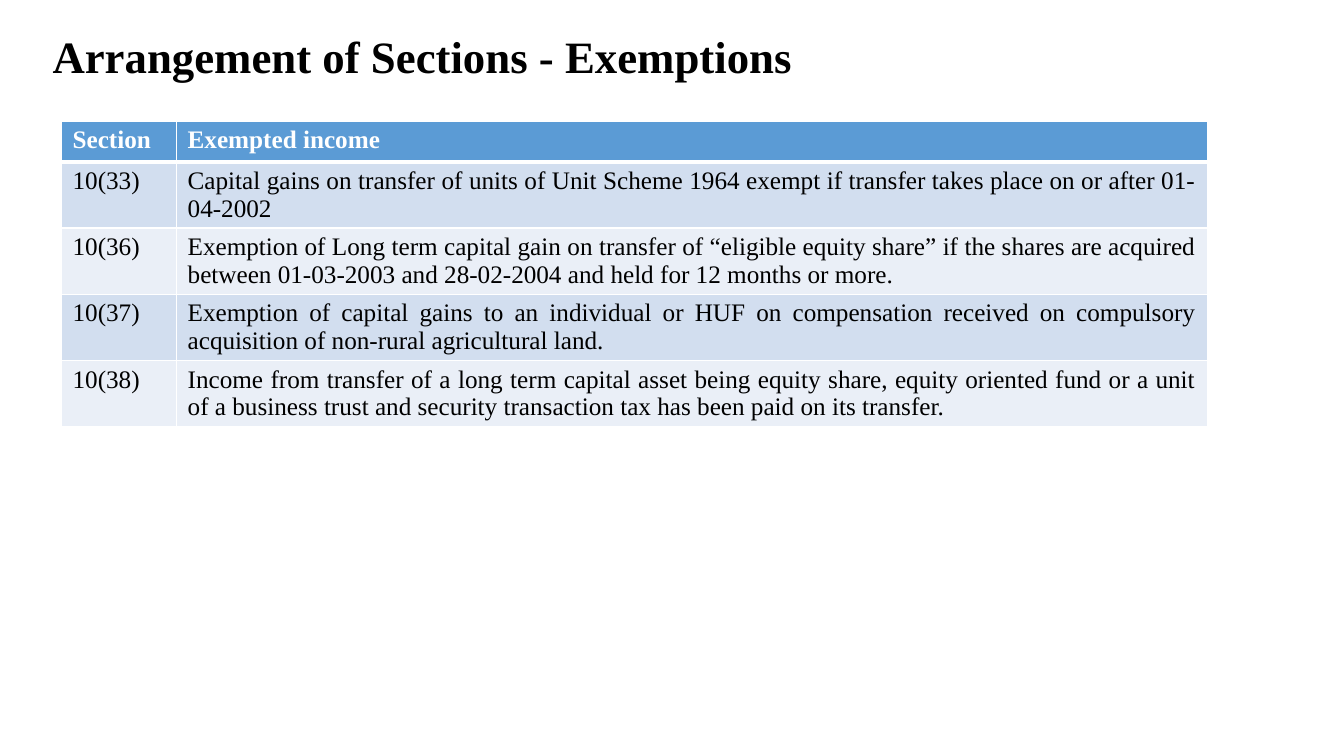
from dataclasses import dataclass

from lxml.etree import SubElement
from pptx import Presentation
from pptx.dml.color import RGBColor
from pptx.enum.text import MSO_ANCHOR, MSO_AUTO_SIZE, PP_ALIGN
from pptx.oxml.ns import qn
from pptx.util import Cm, Pt


@dataclass(frozen=True)
class Theme:
    """Fonts, sizes and colours of the slide."""
    font: str = "Times New Roman"
    title_size: int = 32
    table_size: int = 18
    text: str = "000000"
    light: str = "FFFFFF"
    header: str = "5B9BD5"
    bands: tuple = ("D2DEEF", "EAEFF7")
    rule: int = 1
    header_rule: int = 3


THEME = Theme()
TITLE = "Arrangement of Sections - Exemptions"
COLUMN_WIDTHS = (2.9, 25.98)
HEADER_HEIGHT, ROW_HEIGHT = 1.03, 1.66
EXEMPTIONS = (
    ("Section", "Exempted income"),
    ("10(33)", "Capital gains on transfer of units of Unit Scheme 1964 exempt if "
               "transfer takes place on or after 01-04-2002"),
    ("10(36)", "Exemption of Long term capital gain on transfer of “eligible equity share” "
               "if the shares are acquired between 01-03-2003 and 28-02-2004 and held for "
               "12 months or more."),
    ("10(37)", "Exemption of capital gains to an individual or HUF on compensation received "
               "on compulsory acquisition of non-rural agricultural land."),
    ("10(38)", "Income from transfer of a long term capital asset being equity share, equity "
               "oriented fund or a unit of a business trust and security transaction tax has "
               "been paid on its transfer."),
)


def set_values(target, values):
    """Set each attribute of the target from a dict."""
    for name, value in values.items():
        setattr(target, name, value)


def format_font(paragraph, size, color, bold):
    """Apply the theme font to a paragraph."""
    set_values(paragraph.font, {"name": THEME.font, "size": Pt(size), "bold": bold})
    paragraph.font.color.rgb = RGBColor.from_string(color)


def add_title(slide, text):
    """Fill and place the title placeholder."""
    title = slide.shapes.title
    set_values(title, {"left": Cm(1.07), "top": Cm(0.28),
                       "width": Cm(22.81), "height": Cm(2.41)})
    frame = title.text_frame
    frame.text = text
    set_values(frame, {"vertical_anchor": MSO_ANCHOR.MIDDLE, "word_wrap": True,
                       "auto_size": MSO_AUTO_SIZE.NONE})
    paragraph = frame.paragraphs[0]
    set_values(paragraph, {"alignment": PP_ALIGN.LEFT, "line_spacing": 0.9})
    format_font(paragraph, THEME.title_size, THEME.text, True)


def add_borders(cell, widths):
    """Draw the cell borders with the given widths in points."""
    properties = cell._tc.get_or_add_tcPr()
    for side, width in widths.items():
        line = SubElement(properties, qn(f"a:ln{side}"), w=str(Pt(width)))
        fill = SubElement(line, qn("a:solidFill"))
        SubElement(fill, qn("a:srgbClr"), val=THEME.light)


def format_cell(cell, text, row, column):
    """Write one cell as header or banded body."""
    is_header = row == 0
    widths = dict.fromkeys("LRTB", THEME.rule)
    if is_header:
        widths["B"] = THEME.header_rule
    elif row == 1:
        widths["T"] = THEME.header_rule
    add_borders(cell, widths)
    cell.fill.solid()
    fill_color = THEME.header if is_header else THEME.bands[(row - 1) % 2]
    cell.fill.fore_color.rgb = RGBColor.from_string(fill_color)
    set_values(cell, {"margin_left": Cm(0.28), "margin_right": Cm(0.28),
                      "margin_top": Cm(0.13), "margin_bottom": Cm(0.13)})
    cell.text = text
    paragraph = cell.text_frame.paragraphs[0]
    justified = column == 1 and not is_header
    paragraph.alignment = PP_ALIGN.JUSTIFY if justified else PP_ALIGN.LEFT
    format_font(paragraph, THEME.table_size,
                THEME.light if is_header else THEME.text, is_header)


def add_table(slide, rows):
    """Add the table with a header row and banded body rows."""
    heights = [HEADER_HEIGHT] + [ROW_HEIGHT] * (len(rows) - 1)
    table = slide.shapes.add_table(len(rows), len(COLUMN_WIDTHS), Cm(1.55), Cm(3.05),
                                   Cm(sum(COLUMN_WIDTHS)), Cm(sum(heights))).table
    for column, width in zip(table.columns, COLUMN_WIDTHS):
        column.width = Cm(width)
    for row, height in zip(table.rows, heights):
        row.height = Cm(height)
    for row_index, texts in enumerate(rows):
        for column_index, text in enumerate(texts):
            format_cell(table.cell(row_index, column_index), text, row_index, column_index)


def main():
    """Build and save the slide."""
    presentation = Presentation()
    set_values(presentation, {"slide_width": Cm(33.87), "slide_height": Cm(19.05)})
    slide = presentation.slides.add_slide(presentation.slide_layouts[5])
    add_title(slide, TITLE)
    add_table(slide, EXEMPTIONS)
    presentation.save("out.pptx")


if __name__ == "__main__":
    main()
